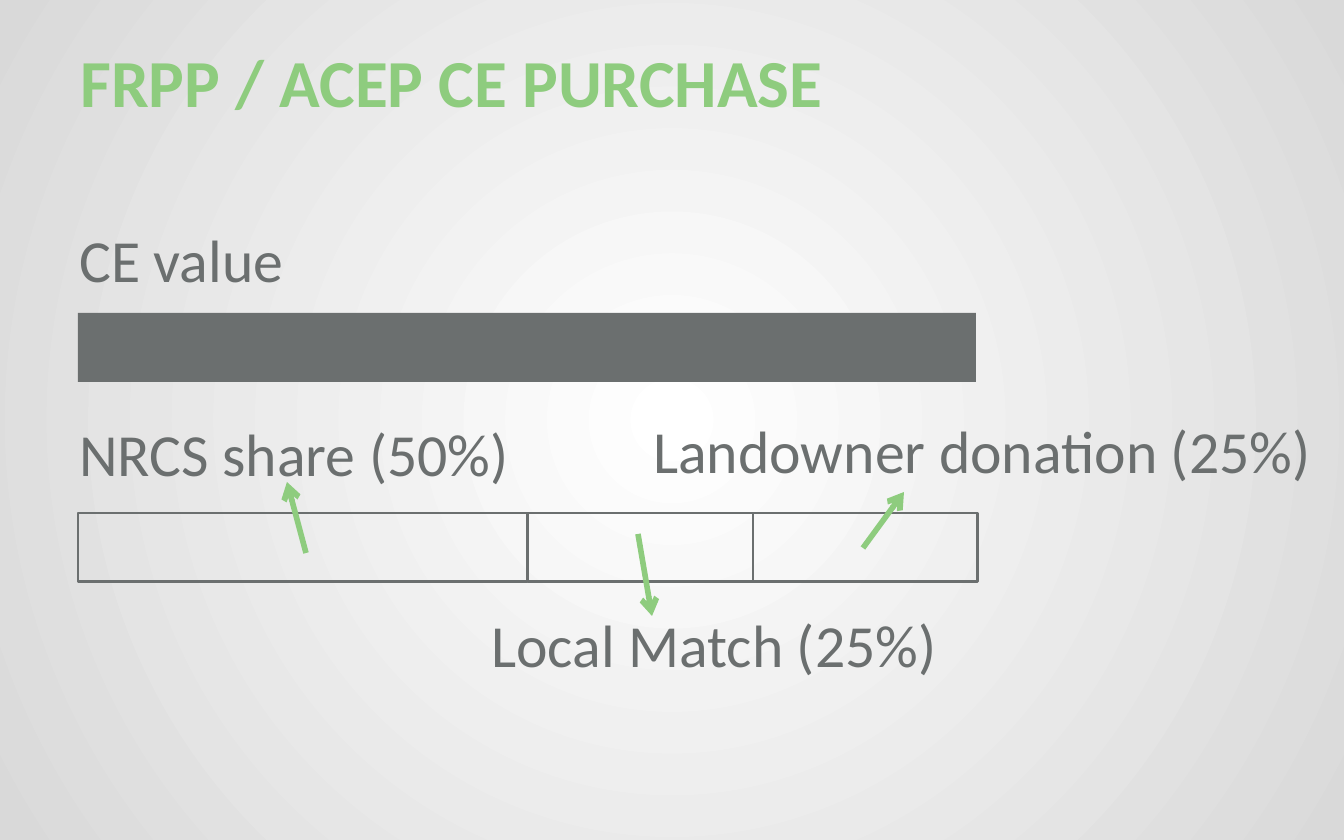
import pptx
import pptx.util
import pptx.dml.color
import pptx.enum.shapes
import pptx.enum.text
import pptx.oxml.ns
from lxml import etree

EMU_PER_PX = 914400 / 134.4
GREEN, GREY = "8ECC7E", "6B6F6F"
BAR_LEFT, BAR_HEIGHT = 78, 69
VALUE_TOP, VALUE_WIDTH = 313, 898
SHARES_TOP, SHARES_WIDTH = 513, 900
SHARES = (0.50, 0.25, 0.25)

LABELS = [
    ("CE value", (66, 216, 241, 86)),
    ("NRCS share (50%)", (66, 410, 470, 86)),
    ("Local Match (25%)", (478, 601, 480, 86)),
    ("Landowner donation (25%)", (640, 407, 704, 86)),
]
POINTERS = [
    (306, 553, 287, 482),
    (638, 534, 652, 616),
    (863, 548, 904, 492),
]


def px(*lengths):
    return [pptx.util.Emu(round(length * EMU_PER_PX)) for length in lengths]


def colour(hex_code):
    return pptx.dml.color.RGBColor.from_string(hex_code)


def apply_format(target, values):
    for attribute, value in values.items():
        setattr(target, attribute, value)


def add_xml(parent, tag, **attributes):
    child = etree.SubElement(parent, pptx.oxml.ns.qn(tag))
    for key, value in attributes.items():
        child.set(key, value)
    return child


def set_background(slide):
    fill = slide.background.fill
    fill.gradient()
    for stop, hex_code in zip(fill.gradient_stops, ("FFFFFF", "D9D9D9")):
        stop.color.rgb = colour(hex_code)
    # Turn the linear gradient into one that spreads from the centre
    gradient = next(slide.element.iter(pptx.oxml.ns.qn("a:gradFill")))
    for linear in gradient.findall(pptx.oxml.ns.qn("a:lin")):
        gradient.remove(linear)
    circle = add_xml(gradient, "a:path", path="circle")
    add_xml(circle, "a:fillToRect", l="50000", t="50000", r="50000", b="50000")


def write_text(shape, text, frame_format, size, hex_code, bold=False):
    frame = shape.text_frame
    frame.text = text
    apply_format(frame, frame_format)
    paragraph = frame.paragraphs[0]
    paragraph.alignment = pptx.enum.text.PP_ALIGN.LEFT
    font = paragraph.runs[0].font
    apply_format(font, {"name": "Calibri", "size": pptx.util.Pt(size), "bold": bold})
    font.color.rgb = colour(hex_code)


def set_title(slide, text):
    title = slide.shapes.title
    left, top, width, height = px(67, 34, 1210, 140)
    apply_format(title, {"left": left, "top": top, "width": width, "height": height})
    frame_format = {
        "word_wrap": True,
        "vertical_anchor": pptx.enum.text.MSO_ANCHOR.TOP,
        "auto_size": pptx.enum.text.MSO_AUTO_SIZE.NONE,
    }
    write_text(title, text, frame_format, 36, GREEN, bold=True)


def add_label(slide, text, box):
    label = slide.shapes.add_textbox(*px(*box))
    frame_format = {
        "word_wrap": False,
        "auto_size": pptx.enum.text.MSO_AUTO_SIZE.SHAPE_TO_FIT_TEXT,
    }
    write_text(label, text, frame_format, 32, GREY)


def add_bar(slide, left, top, width, filled):
    bar = slide.shapes.add_shape(
        pptx.enum.shapes.MSO_SHAPE.RECTANGLE, *px(left, top, width, BAR_HEIGHT))
    bar.shadow.inherit = False
    if filled:
        bar.fill.solid()
        bar.fill.fore_color.rgb = colour(GREY)
        bar.line.fill.background()
    else:
        bar.fill.background()
        bar.line.color.rgb = colour(GREY)
        bar.line.width = pptx.util.Pt(1.5)


def add_pointer(slide, ends):
    pointer = slide.shapes.add_connector(
        pptx.enum.shapes.MSO_CONNECTOR.STRAIGHT, *px(*ends))
    pointer.line.color.rgb = colour(GREEN)
    pointer.line.width = pptx.util.Pt(3)
    add_xml(pointer.line._get_or_add_ln(), "a:tailEnd", type="arrow")
    add_xml(pointer.element.spPr, "a:effectLst")


def main():
    deck = pptx.Presentation()
    deck.slide_width, deck.slide_height = px(1344, 840)
    slide = deck.slides.add_slide(deck.slide_layouts.get_by_name("Title Only"))

    set_background(slide)
    set_title(slide, "FRPP / ACEP CE PURCHASE")

    # Full easement value
    add_bar(slide, BAR_LEFT, VALUE_TOP, VALUE_WIDTH, filled=True)

    # The value split into shares, side by side
    left = BAR_LEFT
    for share in SHARES:
        width = SHARES_WIDTH * share
        add_bar(slide, left, SHARES_TOP, width, filled=False)
        left += width

    # Labels, and arrows from each share to its label
    for text, box in LABELS:
        add_label(slide, text, box)
    for ends in POINTERS:
        add_pointer(slide, ends)

    deck.save("out.pptx")


if __name__ == "__main__":
    main()
